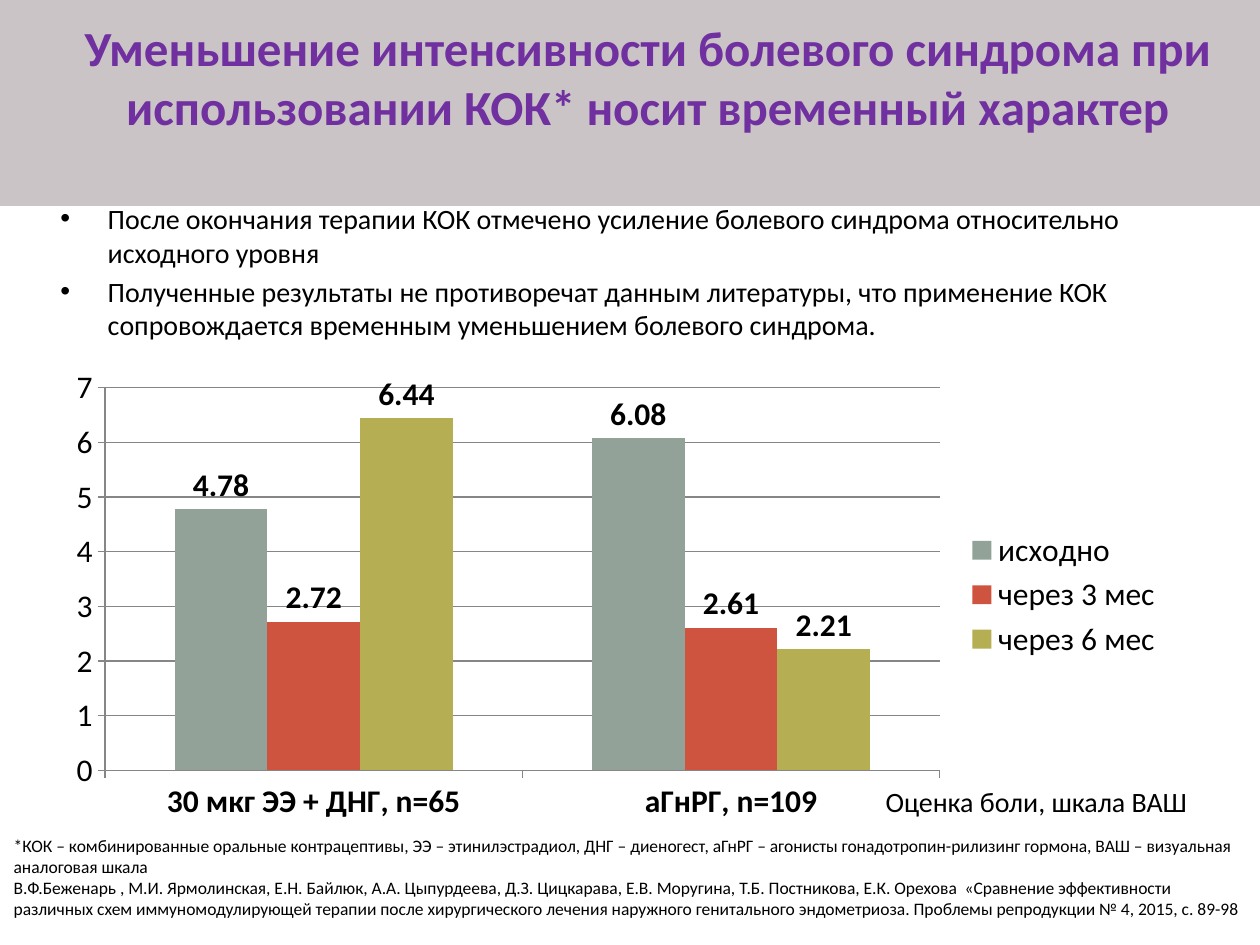
import pptx
import pptx.chart.data
import pptx.dml.color
import pptx.enum.chart
import pptx.enum.shapes
import pptx.enum.text
import pptx.util

Pt = pptx.util.Pt
RGBColor = pptx.dml.color.RGBColor
ANCHOR = pptx.enum.text.MSO_ANCHOR
ALIGN = pptx.enum.text.PP_ALIGN
AUTO_SIZE = pptx.enum.text.MSO_AUTO_SIZE

FONT = "Calibri"
BLACK = RGBColor(0x00, 0x00, 0x00)
PURPLE = RGBColor(0x70, 0x30, 0xA0)
BAND_GREY = RGBColor(0xCA, 0xC4, 0xC6)
AXIS_GREY = RGBColor(0x86, 0x86, 0x86)
SAGE = RGBColor(0x93, 0xA2, 0x99)
RED = RGBColor(0xCF, 0x54, 0x3F)
OLIVE = RGBColor(0xB5, 0xAE, 0x53)

TITLE = ("Уменьшение интенсивности болевого синдрома при "
         "использовании КОК* носит временный характер")
FINDINGS = [
    "После окончания терапии КОК отмечено усиление болевого синдрома "
    "относительно исходного уровня",
    "Полученные результаты не противоречат данным литературы, что применение "
    "КОК сопровождается временным уменьшением болевого синдрома.",
]
FOOTNOTES = [
    "*КОК – комбинированные оральные контрацептивы, ЭЭ – этинилэстрадиол, "
    "ДНГ – диеногест, аГнРГ – агонисты гонадотропин-рилизинг гормона, "
    "ВАШ – визуальная аналоговая шкала",
    "В.Ф.Беженарь , М.И. Ярмолинская, Е.Н. Байлюк, А.А. Цыпурдеева, "
    "Д.З. Цицкарава, Е.В. Моругина, Т.Б. Постникова, Е.К. Орехова  "
    "«Сравнение эффективности различных схем иммуномодулирующей терапии после "
    "хирургического лечения наружного генитального эндометриоза. "
    "Проблемы репродукции № 4, 2015, с. 89-98",
]
TREATMENTS = ["30 мкг ЭЭ + ДНГ, n=65", "аГнРГ, n=109"]
PAIN_SCORES = [
    ("исходно", (4.78, 6.08), SAGE),
    ("через 3 мес", (2.72, 2.61), RED),
    ("через 6 мес", (6.44, 2.21), OLIVE),
]


def apply(target, values):
    for name, value in values.items():
        setattr(target, name, value)


def style_font(font, size, color=BLACK, bold=False):
    apply(font, {"name": FONT, "size": Pt(size), "bold": bold})
    font.color.rgb = color


def place(shape, left, top, width, height):
    apply(shape, {"left": Pt(left), "top": Pt(top),
                  "width": Pt(width), "height": Pt(height)})


def write(frame, texts, size, paragraph_format=None, color=BLACK, bold=False):
    for index, text in enumerate(texts):
        paragraph = frame.paragraphs[0] if index == 0 else frame.add_paragraph()
        run = paragraph.add_run()
        run.text = text
        style_font(run.font, size, color, bold)
        apply(paragraph, paragraph_format or {})
    frame.paragraphs[0].space_before = Pt(0)


def add_band(slide):
    band = slide.shapes.add_shape(
        pptx.enum.shapes.MSO_SHAPE.RECTANGLE, 0, 0, Pt(720), Pt(116.64))
    band.shadow.inherit = False
    band.fill.solid()
    band.fill.fore_color.rgb = BAND_GREY
    band.line.color.rgb = BAND_GREY
    band.line.width = Pt(2)
    # The band lies behind the placeholders
    slide.shapes.element.insert(2, band.element)


def add_text_box(slide, box, texts, size, wrap):
    text_box = slide.shapes.add_textbox(*map(Pt, box))
    apply(text_box.text_frame,
          {"word_wrap": wrap, "auto_size": AUTO_SIZE.SHAPE_TO_FIT_TEXT})
    write(text_box.text_frame, texts, size)


def add_pain_chart(slide, box):
    scores = pptx.chart.data.CategoryChartData()
    scores.categories = TREATMENTS
    for period, values, _ in PAIN_SCORES:
        scores.add_series(period, values)
    chart = slide.shapes.add_chart(
        pptx.enum.chart.XL_CHART_TYPE.COLUMN_CLUSTERED, *map(Pt, box), scores).chart
    style_font(chart.font, 18)
    apply(chart, {"has_title": False, "has_legend": True})
    apply(chart.legend, {"position": pptx.enum.chart.XL_LEGEND_POSITION.RIGHT,
                         "include_in_layout": False})

    # Axes
    for axis in (chart.category_axis, chart.value_axis):
        axis.major_tick_mark = pptx.enum.chart.XL_TICK_MARK.OUTSIDE
        axis.format.line.color.rgb = AXIS_GREY
    apply(chart.value_axis, {"minimum_scale": 0, "maximum_scale": 7,
                             "major_unit": 1, "has_major_gridlines": True})
    chart.value_axis.major_gridlines.format.line.color.rgb = AXIS_GREY
    style_font(chart.category_axis.tick_labels.font, 18, bold=True)

    # Columns and their values
    plot = chart.plots[0]
    apply(plot, {"gap_width": 150, "overlap": 0, "vary_by_categories": False})
    for series, (_, _, color) in zip(plot.series, PAIN_SCORES):
        series.format.fill.solid()
        series.format.fill.fore_color.rgb = color
        labels = series.data_labels
        apply(labels, {"show_value": True,
                       "position": pptx.enum.chart.XL_LABEL_POSITION.OUTSIDE_END})
        style_font(labels.font, 18, bold=True)


def main():
    deck = pptx.Presentation()
    apply(deck, {"slide_width": Pt(720), "slide_height": Pt(540)})
    slide = deck.slides.add_slide(deck.slide_layouts[1])
    add_band(slide)

    # Title, raised within its box by the bottom margin
    title = slide.shapes.title
    place(title, 20, 15, 700, 90)
    apply(title.text_frame, {"vertical_anchor": ANCHOR.MIDDLE, "word_wrap": True,
                             "auto_size": AUTO_SIZE.NONE, "margin_bottom": Pt(36)})
    write(title.text_frame, [TITLE], 28, {"alignment": ALIGN.CENTER}, PURPLE, True)

    # Findings
    findings = slide.placeholders[1]
    place(findings, 27.36, 111.6, 648, 118.8)
    apply(findings.text_frame, {"vertical_anchor": ANCHOR.TOP, "word_wrap": True,
                                "auto_size": AUTO_SIZE.NONE})
    write(findings.text_frame, FINDINGS, 16, {"space_before": Pt(3.2)})

    # Chart with scale note and footnotes
    add_pain_chart(slide, (31, 205.2, 640.8, 269.3))
    add_text_box(slide, (499, 445, 208.8, 26.6), ["Оценка боли, шкала ВАШ"], 16, False)
    add_text_box(slide, (0.72, 473.8, 719.28, 55.4), FOOTNOTES, 10, True)

    deck.save("out.pptx")


if __name__ == "__main__":
    main()
